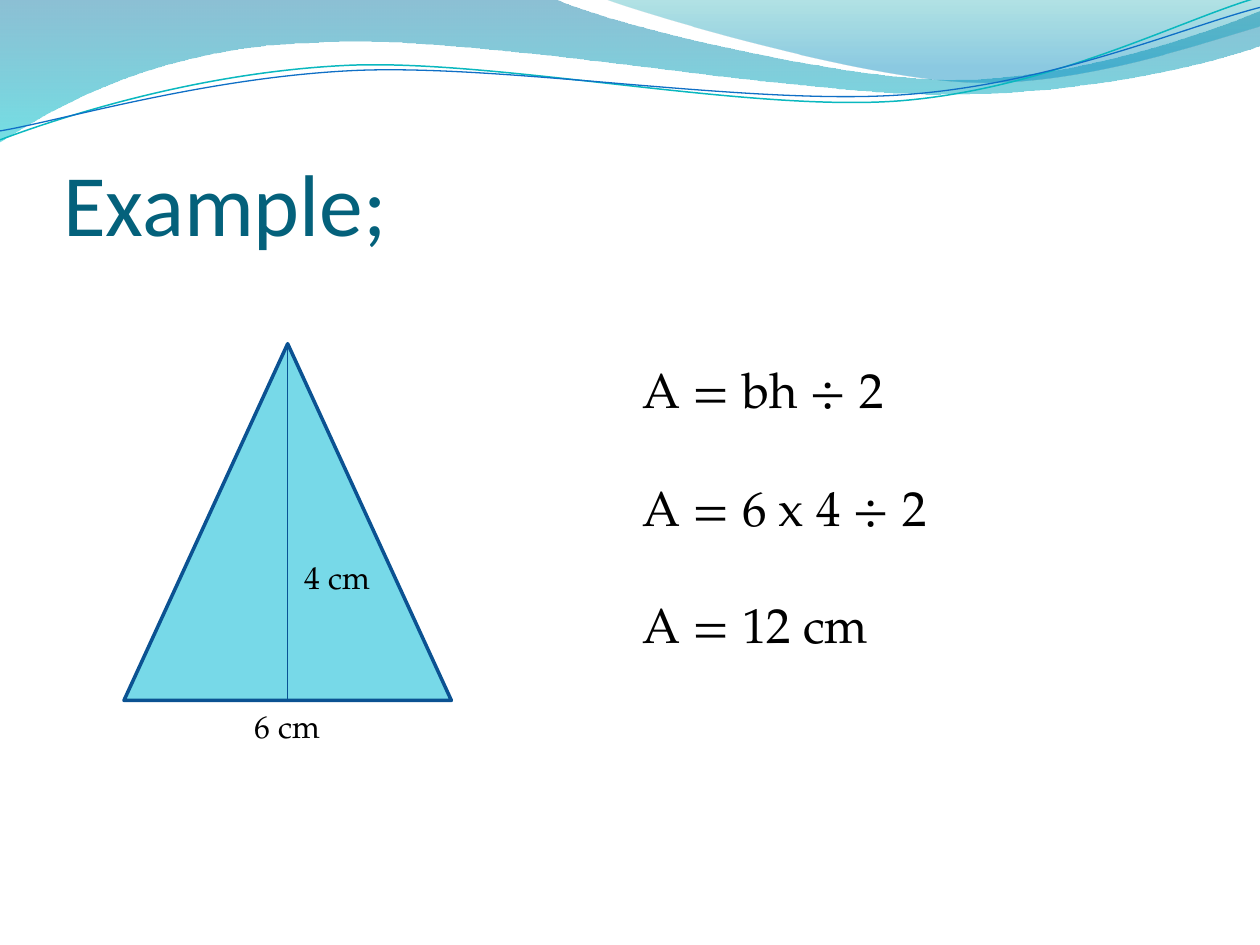
from dataclasses import dataclass

from lxml.etree import SubElement as Sub
from pptx import Presentation
from pptx.dml.color import RGBColor as RGB
from pptx.enum.shapes import MSO_CONNECTOR as Link, MSO_SHAPE as Form
from pptx.enum.text import MSO_ANCHOR as Anchor, PP_ALIGN as Align
from pptx.oxml.ns import qn
from pptx.util import Cm, Pt


@dataclass(frozen=True)
class Theme:
    head: str = "Calibri"
    body: str = "TeX Gyre Pagella"
    title: str = "04617B"
    ink: str = "000000"
    face: str = "77D9E8"
    edge: str = "0B5292"
    drop: str = "095295"
    teal: str = "0AB8BF"
    blue: str = "0F6FC6"
    big: int = 50
    mid: int = 28
    small: int = 18


T = Theme()
TILT = 357.3

# Wave outlines in cm: a pair is a straight step, six numbers are a curve.
# Gradient stops: position, colour, opacity in percent.
BANDS = [
    ([(0, 0), (11.18, -0.02),
      (12.09, 0.43, 16.87, 1.6, 19.25, 1.6),
      (21.67, 1.6, 24.33, 0.66, 25.4, 0.23), (25.43, 0.91),
      (24.97, 1.12, 22.1, 1.93, 18.95, 1.9),
      (15.8, 1.9, 9.7, 0.71, 6.53, 0.86),
      (3.28, 0.91, 1.17, 2.11, -0.02, 2.87)],
     [(0, "0074A1", 45), (1, "00C6CF", 55)]),
    ([(12.17, -0.02),
      (12.93, 0.28, 17.32, 1.57, 19.53, 1.65),
      (21.74, 1.75, 24.41, 0.81, 25.4, 0.53), (25.4, 0)],
     [(0, "00A1A9", 30), (0.8, "008BBF", 45)]),
]
# Level outlines, tilted once drawn
LINES = [
    ([(-0.05, 2.22),
      (1.19, 1.82, 4.02, 1.04, 7.06, 1.05),
      (10.05, 1.07, 15.02, 2.37, 18.07, 2.29),
      (21.13, 2.2, 23.87, 0.91, 25.41, 0.55)], T.teal, 0.85),
    ([(-0.04, 2.04),
      (1.16, 1.9, 4.18, 1.15, 7.2, 1.16),
      (10.25, 1.18, 15.13, 2.25, 18.18, 2.17),
      (21.21, 2.1, 23.93, 1.06, 25.45, 0.75)], T.blue, 0.75),
]


def stroke(item, color, width):
    item.line.color.rgb = RGB.from_string(color)
    item.line.width = Pt(width)


def outline(slide, steps, close):
    ends = [(Cm(s[-2]), Cm(s[-1])) for s in steps]
    pen = slide.shapes.build_freeform(*ends[0])
    pen.add_line_segments(ends[1:], close=close)
    shape = pen.convert_to_shape()
    shape.shadow.inherit = False
    # Bend the straight segments that have handles
    segs = list(shape.element.spPr.iter(qn("a:lnTo")))
    for seg, step in zip(segs, steps[1:]):
        if len(step) == 6:
            seg.clear()
            seg.tag = qn("a:cubicBezTo")
            for x, y in zip(step[::2], step[1::2]):
                Sub(seg, qn("a:pt"), x=str(Cm(x) - shape.left),
                    y=str(Cm(y) - shape.top))
    return shape


def band(slide, steps, stops):
    shape = outline(slide, steps, True)
    shape.line.fill.background()
    shape.fill.gradient()
    shape.fill.gradient_angle = 270
    for stop, (pos, color, _) in zip(shape.fill.gradient_stops, stops):
        stop.position = pos
        stop.color.rgb = RGB.from_string(color)
    # Opacity of each stop
    tones = list(shape.element.spPr.iter(qn("a:srgbClr")))
    for tone, (_, _, alpha) in zip(tones, stops):
        Sub(tone, qn("a:alpha"), val=str(alpha * 1000))


def wave(slide, steps, color, width):
    shape = outline(slide, steps, False)
    shape.rotation = TILT
    shape.fill.background()
    stroke(shape, color, width)


def write(frame, *texts, size=T.small, font=T.body, color=T.ink, gap=0):
    frame.word_wrap = True
    for i, text in enumerate(texts):
        para = frame.add_paragraph() if i else frame.paragraphs[0]
        para.alignment = Align.LEFT
        para.space_before = Pt(gap if i else 0)
        run = para.add_run()
        run.text = text
        run.font.size = Pt(size)
        run.font.name = font
        run.font.color.rgb = RGB.from_string(color)


def label(slide, x, y, w, h, *texts, **style):
    box = slide.shapes.add_textbox(Cm(x), Cm(y), Cm(w), Cm(h))
    write(box.text_frame, *texts, **style)


def heading(slide, text):
    title = slide.shapes.title
    title.left, title.top = Cm(1.27), Cm(1.94)
    title.width, title.height = Cm(22.86), Cm(3.18)
    frame = title.text_frame
    frame.margin_left = frame.margin_right = frame.margin_bottom = 0
    frame.vertical_anchor = Anchor.BOTTOM
    write(frame, text, size=T.big, font=T.head, color=T.title)
    # Bring the title in front of the waves
    title.element.getparent().append(title.element)


def triangle(slide, x, y, w, h):
    shape = slide.shapes.add_shape(Form.ISOSCELES_TRIANGLE,
                                   Cm(x), Cm(y), Cm(w), Cm(h))
    shape.shadow.inherit = False
    shape.fill.solid()
    shape.fill.fore_color.rgb = RGB.from_string(T.face)
    stroke(shape, T.edge, 2)
    # Height from apex to base
    mid = Cm(x + w / 2)
    drop = slide.shapes.add_connector(Link.STRAIGHT, mid, Cm(y),
                                      mid, Cm(y + h))
    stroke(drop, T.drop, 0.75)
    Sub(drop.element.spPr, qn("a:effectLst"))


def main():
    deck = Presentation()
    deck.slide_width, deck.slide_height = Cm(25.4), Cm(19.05)
    slide = deck.slides.add_slide(deck.slide_layouts[5])

    # Waves along the top
    for args in BANDS:
        band(slide, *args)
    for args in LINES:
        wave(slide, *args)
    heading(slide, "Example;")

    # Triangle with its measures
    triangle(slide, 2.5, 6.93, 6.6, 7.19)
    label(slide, 5.89, 11.13, 2.59, 1.02, "4 cm")
    label(slide, 4.89, 14.12, 3, 1.02, "6 cm")

    # Worked steps
    label(slide, 12.7, 7.12, 6.6, 6.25,
          "A = bh ÷ 2", "A = 6 x 4 ÷ 2", "A = 12 cm",
          size=T.mid, gap=33.7)
    deck.save("out.pptx")


if __name__ == "__main__":
    main()
